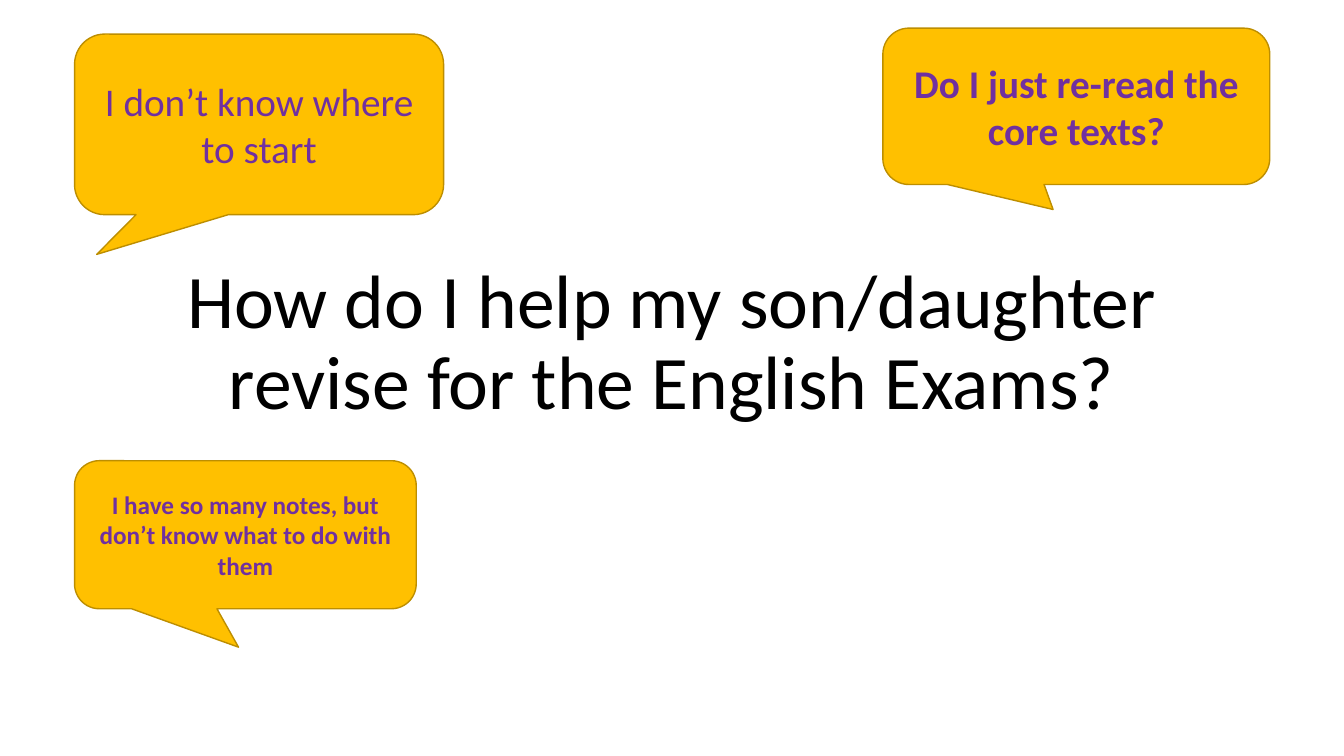
from dataclasses import dataclass

from pptx import Presentation
from pptx.dml.color import RGBColor
from pptx.enum.shapes import MSO_SHAPE
from pptx.enum.text import MSO_ANCHOR, PP_ALIGN
from pptx.slide import Slide
from pptx.text.text import TextFrame
from pptx.util import Cm, Pt

CALLOUT = MSO_SHAPE.ROUNDED_RECTANGULAR_CALLOUT
MIDDLE, BOTTOM = MSO_ANCHOR.MIDDLE, MSO_ANCHOR.BOTTOM
CENTER = PP_ALIGN.CENTER
BLANK_LAYOUT = 6


@dataclass(frozen=True)
class Theme:
    font: str = "Calibri"
    title_color: RGBColor = RGBColor(0x00, 0x00, 0x00)
    bubble_fill: RGBColor = RGBColor(0xFF, 0xC0, 0x00)
    bubble_line: RGBColor = RGBColor(0xBD, 0x8E, 0x00)
    bubble_text: RGBColor = RGBColor(0x70, 0x30, 0xA0)
    title_size: int = 54
    large_size: int = 28
    small_size: int = 18


@dataclass(frozen=True)
class Box:
    """Position and size in centimetres."""
    left: float
    top: float
    width: float
    height: float

    def lengths(self) -> tuple[Cm, Cm, Cm, Cm]:
        return Cm(self.left), Cm(self.top), Cm(self.width), Cm(self.height)


@dataclass(frozen=True)
class Bubble:
    """A speech bubble; the tail tip is relative to its centre, in widths and heights."""
    text: str
    box: Box
    tail: tuple[float, float]
    size: int
    bold: bool = True


THEME = Theme()
CORNER = 0.167
LEFT_MARGIN = 1.88
TITLE = "How do I help my son/daughter revise for the English Exams?"
TITLE_BOX = Box(4.23, 4.23, 25.4, 6.63)
BUBBLES = (
    Bubble("I don’t know where to start", Box(LEFT_MARGIN, 0.86, 9.3, 4.55),
           (-0.44, 0.72), THEME.large_size, bold=False),
    Bubble("Do I just re-read the core texts?", Box(22.25, 0.71, 9.75, 3.94),
           (-0.06, 0.66), THEME.large_size),
    Bubble("I have so many notes, but don’t know what to do with them",
           Box(LEFT_MARGIN, 11.61, 8.61, 3.73), (-0.02, 0.76), THEME.small_size),
)


def set_text(frame: TextFrame, text: str, anchor: MSO_ANCHOR,
             size: int, color: RGBColor, bold: bool = False) -> None:
    frame.word_wrap = True
    frame.vertical_anchor = anchor
    paragraph = frame.paragraphs[0]
    paragraph.alignment = CENTER
    run = paragraph.add_run()
    run.text = text
    font_format = {"name": THEME.font, "size": Pt(size), "bold": bold}
    for name, value in font_format.items():
        setattr(run.font, name, value)
    run.font.color.rgb = color


def add_title(slide: Slide) -> None:
    shape = slide.shapes.add_textbox(*TITLE_BOX.lengths())
    set_text(shape.text_frame, TITLE, BOTTOM, THEME.title_size, THEME.title_color)
    shape.text_frame.paragraphs[0].line_spacing = 0.9


def add_bubble(slide: Slide, bubble: Bubble) -> None:
    shape = slide.shapes.add_shape(CALLOUT, *bubble.box.lengths())
    for index, value in enumerate((*bubble.tail, CORNER)):
        shape.adjustments[index] = value
    shape.shadow.inherit = False
    shape.fill.solid()
    shape.fill.fore_color.rgb = THEME.bubble_fill
    shape.line.color.rgb = THEME.bubble_line
    shape.line.width = Pt(1)
    set_text(shape.text_frame, bubble.text, MIDDLE,
             bubble.size, THEME.bubble_text, bubble.bold)


def main() -> None:
    presentation = Presentation()
    presentation.slide_width = Cm(33.87)
    presentation.slide_height = Cm(19.05)
    slide = presentation.slides.add_slide(presentation.slide_layouts[BLANK_LAYOUT])
    add_title(slide)
    for bubble in BUBBLES:
        add_bubble(slide, bubble)
    presentation.save("out.pptx")


if __name__ == "__main__":
    main()
